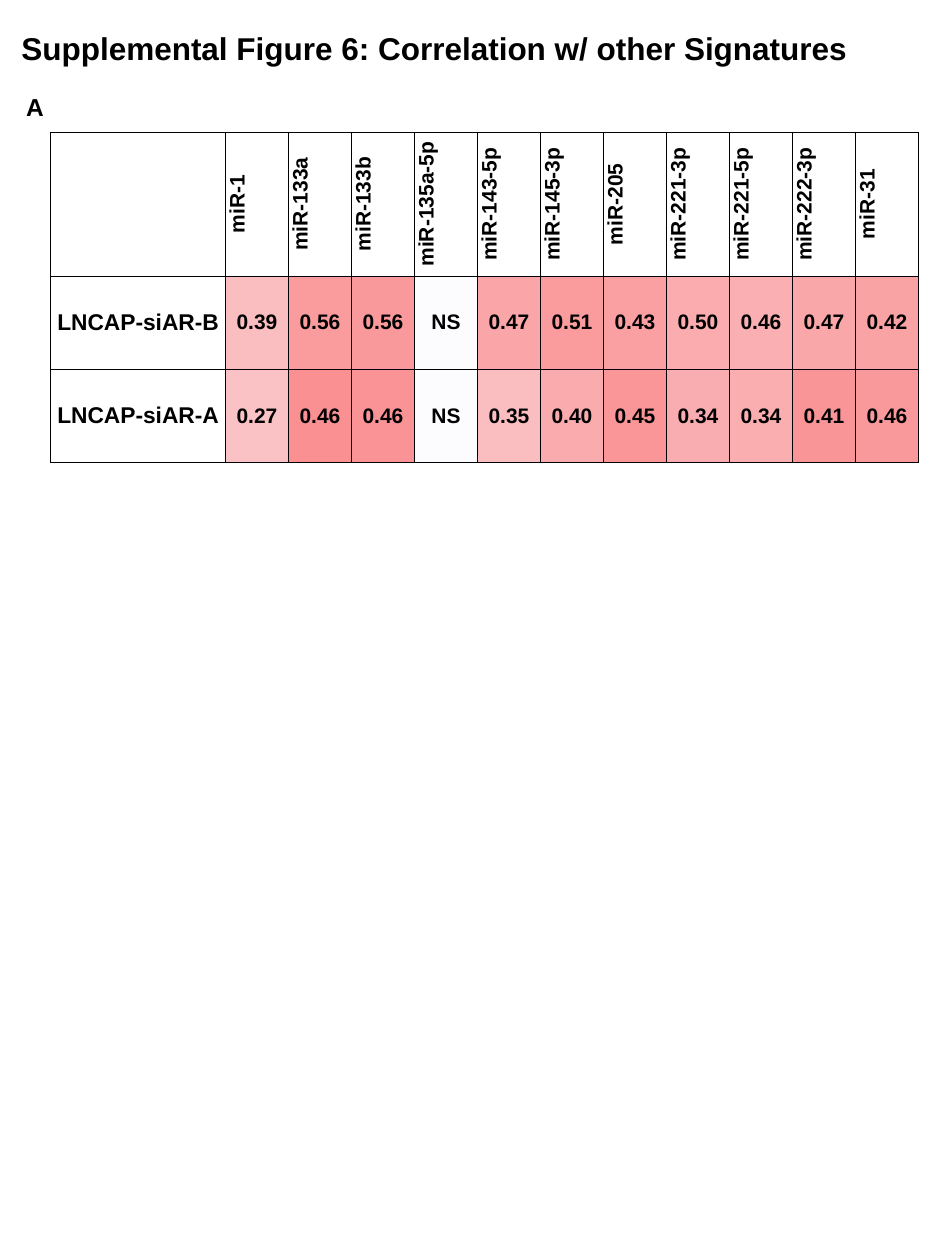
from typing import NamedTuple

from lxml.etree import SubElement
from pptx import Presentation
from pptx.dml.color import RGBColor
from pptx.enum.text import MSO_ANCHOR, PP_ALIGN
from pptx.oxml import parse_xml
from pptx.oxml.ns import nsdecls
from pptx.util import Pt

PX = 9144  # 100 px to the inch
FONT = "Arial"
BLACK = "000000"


class Label(NamedTuple):
    text: str
    box: tuple[int, int, int, int]
    size: int
    inset: tuple[int, int]


class Signature(NamedTuple):
    name: str
    values: list[str]
    fills: list[str]


LABELS = [
    Label("Supplemental Figure 6: Correlation w/ other Signatures",
          (12, 20, 672, 35), 18, (5, 3)),
    Label("A", (11, 68, 34, 34), 14, (10, 5)),
]
MIRNAS = ["miR-1", "miR-133a", "miR-133b", "miR-135a-5p", "miR-143-5p",
          "miR-145-3p", "miR-205", "miR-221-3p", "miR-221-5p", "miR-222-3p",
          "miR-31"]
SIGNATURES = [
    Signature("LNCAP-siAR-B",
              ["0.39", "0.56", "0.56", "NS", "0.47", "0.51", "0.43", "0.50",
               "0.46", "0.47", "0.42"],
              ["FBBEC0", "FA9B9D", "FA999B", "FCFCFF", "FAA6A8", "FA9B9D",
               "FAA0A3", "FAACAF", "FAB0B2", "FAA7A9", "FAA3A5"]),
    Signature("LNCAP-siAR-A",
              ["0.27", "0.46", "0.46", "NS", "0.35", "0.40", "0.45", "0.34",
               "0.34", "0.41", "0.46"],
              ["FBC2C5", "FA9092", "FA9396", "FCFCFF", "FBBEC0", "FAABAE",
               "FA9598", "FAADB0", "FAAEB0", "FA9597", "FA999B"]),
]
TABLE_BOX = (40, 105, 685, 261)
NAME_W, VALUE_W = 139, 50
HEADER_H, ROW_H = 114, 74


def px(n: int) -> int:
    return n * PX


def rgb(color: str) -> RGBColor:
    return RGBColor.from_string(color)


def add_run(p, text: str, size: int) -> None:
    r = p.add_run()
    r.text = text
    r.font.name = FONT
    r.font.size = Pt(size)
    r.font.bold = True
    r.font.color.rgb = rgb(BLACK)


def add_label(s, label: Label) -> None:
    tf = s.shapes.add_textbox(*map(px, label.box)).text_frame
    tf.word_wrap = False
    tf.margin_left = tf.margin_right = px(label.inset[0])
    tf.margin_top = tf.margin_bottom = px(label.inset[1])
    add_run(tf.paragraphs[0], label.text, label.size)


def set_borders(cell) -> None:
    tc_pr = cell._tc.get_or_add_tcPr()
    for i, side in enumerate("LRTB"):
        ln = parse_xml(f'<a:ln{side} {nsdecls("a")} w="{Pt(0.5)}"/>')
        fill = SubElement(ln, ln.tag.replace(f"ln{side}", "solidFill"))
        SubElement(fill, ln.tag.replace(f"ln{side}", "srgbClr"), val=BLACK)
        tc_pr.insert(i, ln)


def set_cell(cell, text: str = "", size: int = 12, fill: str = "",
             vertical: bool = False) -> None:
    cell.margin_left = cell.margin_right = 0
    cell.margin_top = cell.margin_bottom = 0
    cell.vertical_anchor = MSO_ANCHOR.MIDDLE
    if fill:
        cell.fill.solid()
        cell.fill.fore_color.rgb = rgb(fill)
    else:
        cell.fill.background()
    set_borders(cell)
    if vertical:
        cell._tc.get_or_add_tcPr().set("vert", "vert270")
    if text:
        p = cell.text_frame.paragraphs[0]
        p.alignment = PP_ALIGN.CENTER
        add_run(p, text, size)


def add_correlations(s) -> None:
    table = s.shapes.add_table(len(SIGNATURES) + 1, len(MIRNAS) + 1,
                               *map(px, TABLE_BOX)).table
    table.first_row = table.horz_banding = False
    for i, col in enumerate(table.columns):
        col.width = px(VALUE_W if i else NAME_W)
    for i, row in enumerate(table.rows):
        row.height = px(ROW_H if i else HEADER_H)

    # Header row
    set_cell(table.cell(0, 0))
    for j, name in enumerate(MIRNAS, 1):
        set_cell(table.cell(0, j), name, vertical=True)

    # Heat map rows
    for i, sig in enumerate(SIGNATURES, 1):
        set_cell(table.cell(i, 0), sig.name, size=13)
        for j, (value, fill) in enumerate(zip(sig.values, sig.fills), 1):
            set_cell(table.cell(i, j), value, fill=fill)


def main() -> None:
    prs = Presentation()
    prs.slide_width, prs.slide_height = px(750), px(1000)
    s = prs.slides.add_slide(prs.slide_layouts[6])
    add_correlations(s)
    for label in LABELS:
        add_label(s, label)
    prs.save("out.pptx")


if __name__ == "__main__":
    main()
